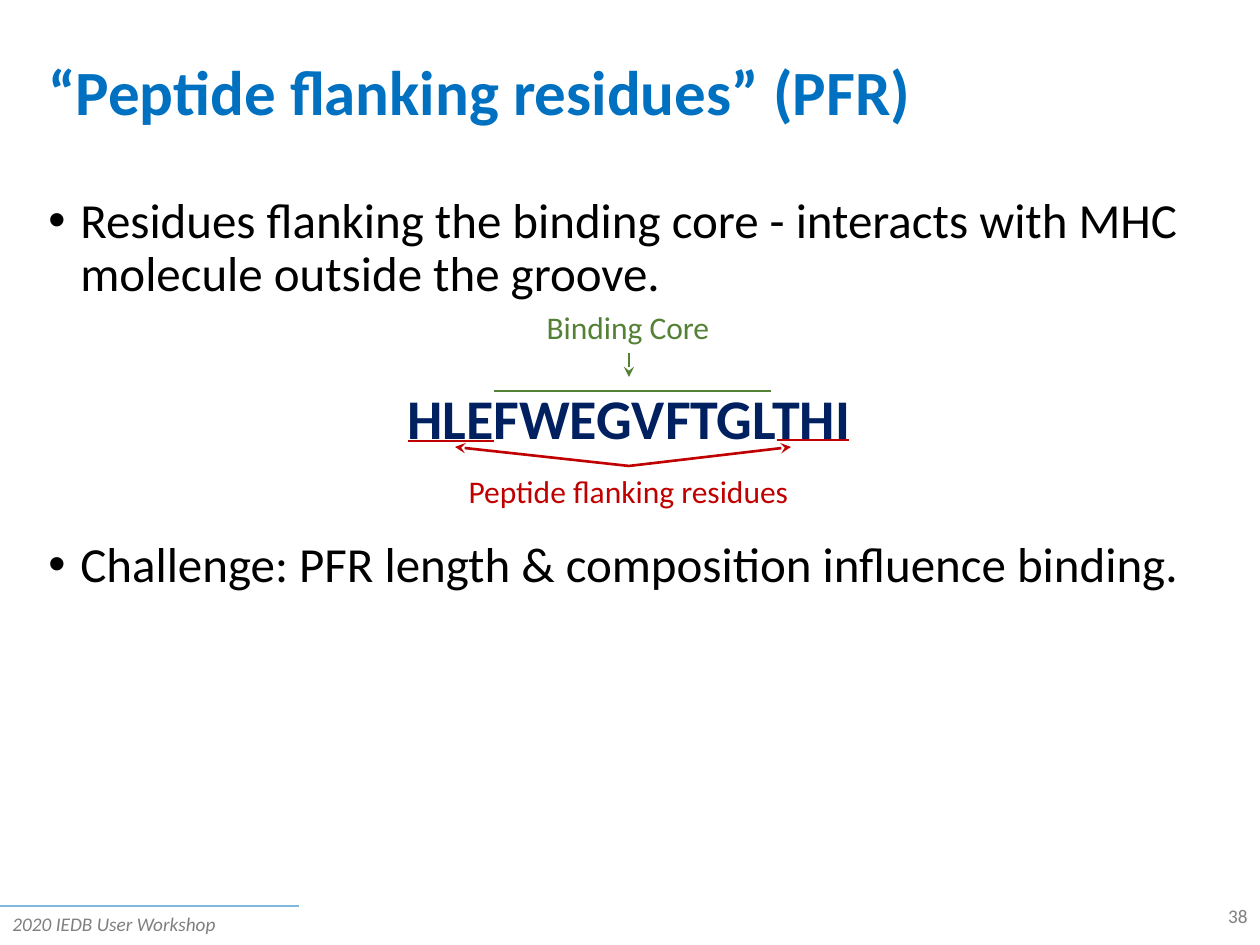
import dataclasses
import typing

import lxml.etree
import pptx
import pptx.dml.color
import pptx.enum.shapes
import pptx.enum.text
import pptx.oxml.ns
import pptx.util

EMU_PER_PX = 914400 / 126
FONT = "Calibri"
BLUE, NAVY, GREEN, RED = "0070C0", "002060", "548135", "C00000"
BLACK, GREY = "000000", "7F7F7F"
LEFT = pptx.enum.text.PP_ALIGN.LEFT
CENTER = pptx.enum.text.PP_ALIGN.CENTER
RIGHT = pptx.enum.text.PP_ALIGN.RIGHT
BULLET_INDENT = 32
SEQUENCE_GAP = 50.8  # points above and below the sequence diagram


@dataclasses.dataclass
class Paragraph:
    text: str
    size: int
    color: str
    align: int = LEFT
    bold: bool = False
    italic: bool = False
    bullet: bool = False
    line_spacing: float = 1.0
    space_before: float = 0


@dataclasses.dataclass
class TextBox:
    left: int
    top: int
    width: int
    height: int
    paragraphs: list[Paragraph]
    anchor: int = pptx.enum.text.MSO_ANCHOR.TOP


@dataclasses.dataclass
class Line:
    start: tuple[int, int]
    end: tuple[int, int]
    color: str
    width: float = 1.5
    arrow: bool = False
    opacity: int = 100


def px(length: int) -> int:
    return round(length * EMU_PER_PX)


def rgb(color: str) -> pptx.dml.color.RGBColor:
    return pptx.dml.color.RGBColor.from_string(color)


def add_element(parent: typing.Any, tag: str, **attributes: str) -> typing.Any:
    return lxml.etree.SubElement(parent, pptx.oxml.ns.qn(tag), **attributes)


def add_bullet(para: typing.Any, color: str) -> None:
    properties = para._p.get_or_add_pPr()
    properties.set("marL", str(px(BULLET_INDENT)))
    properties.set("indent", str(-px(BULLET_INDENT)))
    add_element(add_element(properties, "a:buClr"), "a:srgbClr", val=color)
    add_element(properties, "a:buFont", typeface="Arial")
    add_element(properties, "a:buChar", char="•")


def draw_text(page: typing.Any, item: TextBox) -> None:
    box = page.shapes.add_textbox(
        px(item.left), px(item.top), px(item.width), px(item.height))
    frame = box.text_frame
    frame.word_wrap = True
    frame.vertical_anchor = item.anchor
    for index, content in enumerate(item.paragraphs):
        para = frame.add_paragraph() if index else frame.paragraphs[0]
        para.alignment = content.align
        para.line_spacing = content.line_spacing
        if content.space_before:
            para.space_before = pptx.util.Pt(content.space_before)
        if content.bullet:
            add_bullet(para, content.color)
        span = para.add_run()
        span.text = content.text
        span.font.name = FONT
        span.font.size = pptx.util.Pt(content.size)
        span.font.bold = content.bold
        span.font.italic = content.italic
        span.font.color.rgb = rgb(content.color)


def draw_line(page: typing.Any, item: Line) -> None:
    connector = page.shapes.add_connector(
        pptx.enum.shapes.MSO_CONNECTOR.STRAIGHT,
        *map(px, item.start + item.end))
    connector.line.color.rgb = rgb(item.color)
    connector.line.width = pptx.util.Pt(item.width)
    outline = connector.line._get_or_add_ln()
    if item.opacity < 100:
        color = outline.find(".//" + pptx.oxml.ns.qn("a:srgbClr"))
        add_element(color, "a:alpha", val=str(item.opacity * 1000))
    if item.arrow:
        add_element(outline, "a:tailEnd", type="stealth")
    add_element(connector._element.spPr, "a:effectLst")


TEXTS = [
    # Title
    TextBox(36, 34, 1186, 122, [
        Paragraph("“Peptide flanking residues” (PFR)", 36, BLUE, bold=True,
                  line_spacing=0.9),
    ], pptx.enum.text.MSO_ANCHOR.MIDDLE),
    # Body
    TextBox(36, 190, 1186, 661, [
        Paragraph("Residues flanking the binding core - interacts with MHC "
                  "molecule outside the groove.", 28, BLACK, bullet=True,
                  line_spacing=0.9),
        Paragraph("HLEFWEGVFTGLTHI", 32, NAVY, CENTER, bold=True,
                  line_spacing=0.9, space_before=SEQUENCE_GAP),
        Paragraph("Challenge: PFR length & composition influence binding.",
                  28, BLACK, bullet=True, line_spacing=0.9,
                  space_before=SEQUENCE_GAP),
    ]),
    # Footer
    TextBox(976, 898, 284, 35, [Paragraph("38", 11, GREY, RIGHT)]),
    TextBox(0, 906, 299, 35, [
        Paragraph("2020 IEDB User Workshop", 11, GREY, italic=True)]),
    # Diagram labels
    TextBox(408, 466, 441, 50, [
        Paragraph("Peptide flanking residues", 18, RED, CENTER)]),
    TextBox(528, 302, 200, 50, [
        Paragraph("Binding Core", 18, GREEN, CENTER)]),
]

FLANK_ORIGIN = (629, 466)
LINES = [
    # Footer rule
    Line((0, 906), (299, 906), BLUE, width=1, opacity=50),
    # Binding core
    Line((494, 391), (771, 391), GREEN),
    Line((629, 353), (629, 377), GREEN, arrow=True),
    # Flanking residues
    Line((408, 441), (494, 441), RED),
    Line((777, 440), (849, 440), RED),
    Line(FLANK_ORIGIN, (455, 447), RED, arrow=True),
    Line(FLANK_ORIGIN, (791, 447), RED, arrow=True),
]


def main() -> None:
    deck = pptx.Presentation()
    deck.slide_width, deck.slide_height = px(1260), px(945)
    page = deck.slides.add_slide(deck.slide_layouts[6])
    for text in TEXTS:
        draw_text(page, text)
    for line in LINES:
        draw_line(page, line)
    deck.save("out.pptx")


if __name__ == "__main__":
    main()
